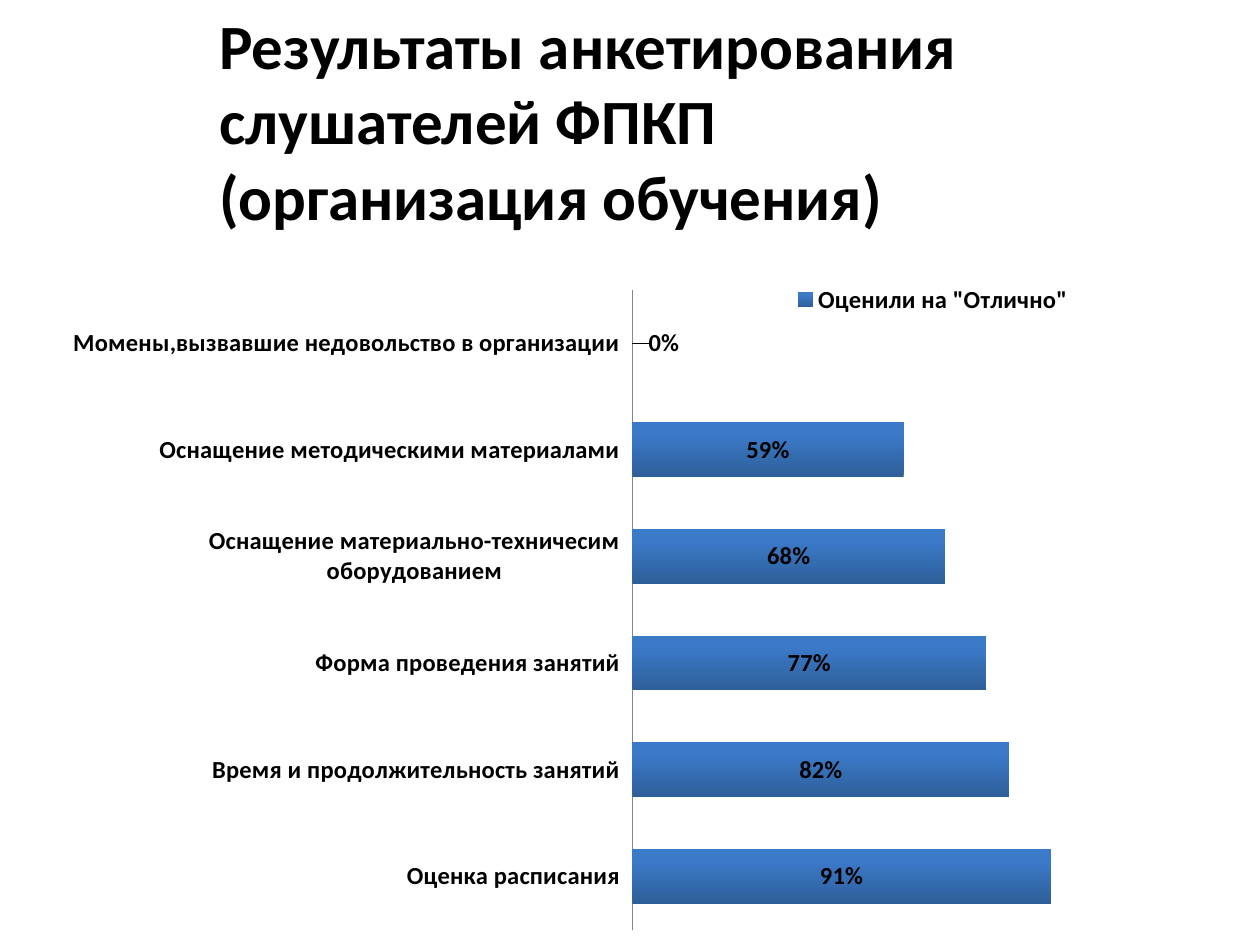
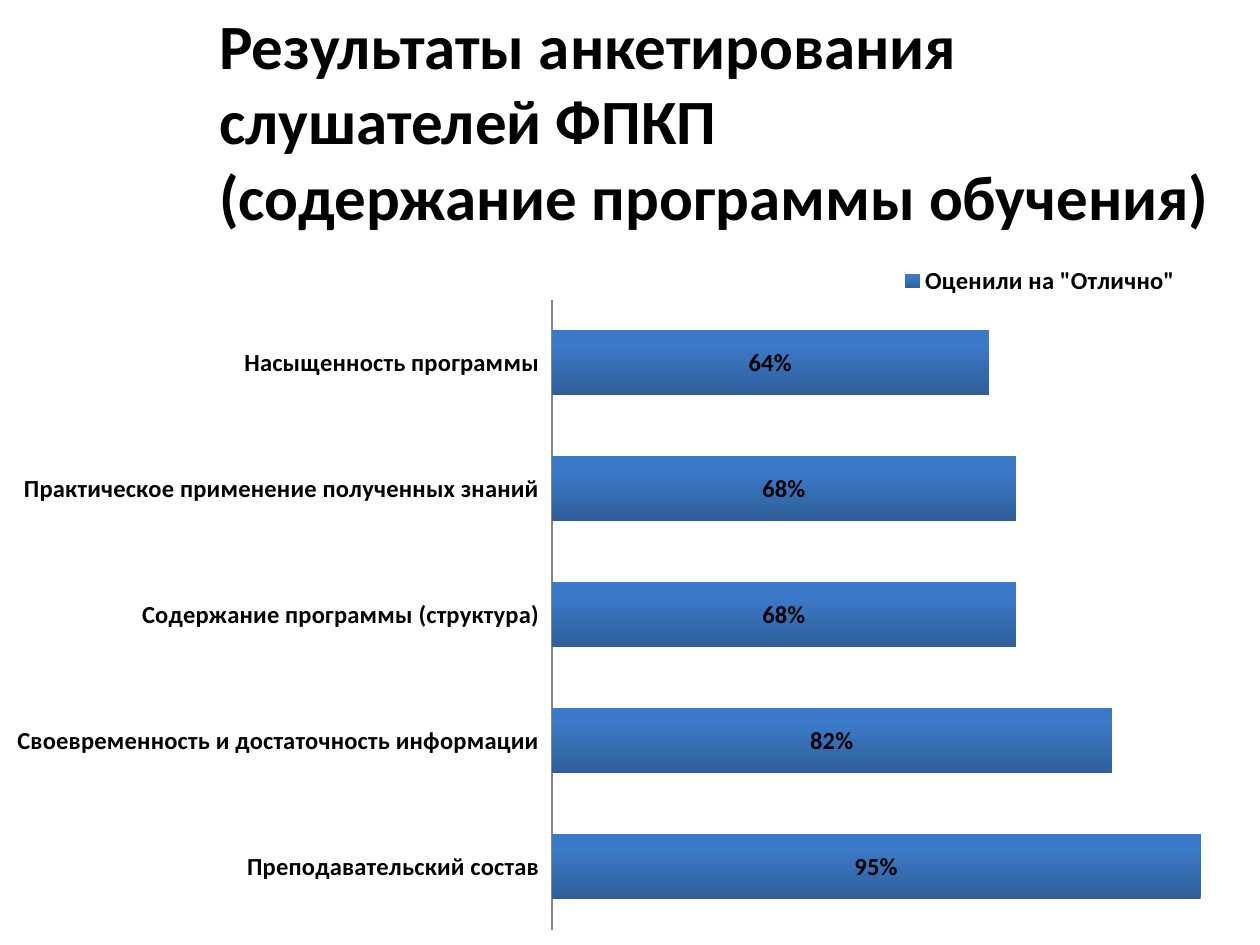
from lxml import etree
from pptx import Presentation
from pptx.chart.data import CategoryChartData
from pptx.dml.color import RGBColor
from pptx.enum.chart import XL_CHART_TYPE, XL_LEGEND_POSITION, XL_TICK_LABEL_POSITION, XL_TICK_MARK
from pptx.oxml.ns import qn
from pptx.util import Inches, Pt

BAR_STACKED = XL_CHART_TYPE.BAR_STACKED
LEGEND_TOP = XL_LEGEND_POSITION.TOP
LABELS_LOW = XL_TICK_LABEL_POSITION.LOW
NO_TICK = XL_TICK_MARK.NONE

FONT = "Calibri"
BLACK = "000000"
AXIS_GREY = "868686"
BAR_DARK, BAR_LIGHT = "2E5F99", "3B7AC9"
TITLE_BOX = (1.64, 0, 8.36, 1.92)
TITLE_START = "Результаты анкетирования слушателей ФПКП"
SERIES_NAME = 'Оценили на "Отлично"'

SURVEYS = [
    {
        "topic": "(организация обучения)",
        "box": (0.47, 1.8, 8.36, 5.7),
        "plot": (5.02, 2.3, 3.65, 5.08),
        "legend": (6.27, 2.22),
        "scores": [
            ("Оценка расписания", 0.91),
            ("Время и продолжительность занятий", 0.82),
            ("Форма проведения занятий", 0.77),
            ("Оснащение материально-техничесим оборудованием", 0.68),
            ("Оснащение методическими материалами", 0.59),
            ("Момены,вызвавшие недовольство в организации", 0),
        ],
    },
    {
        "topic": "(содержание программы обучения)",
        "box": (0, 1.87, 10, 5.63),
        "plot": (4.38, 2.38, 5.42, 5),
        "legend": (7.12, 2.07),
        "scores": [
            ("Преподавательский состав", 0.95),
            ("Своевременность и достаточность информации", 0.82),
            ("Содержание программы (структура)", 0.68),
            ("Практическое применение полученных знаний", 0.68),
            ("Насыщенность программы", 0.64),
        ],
    },
]


def color(value):
    """Turn a hex string into a colour."""
    return RGBColor.from_string(value)


def style_font(font, size):
    """Apply the shared bold black type."""
    font.name, font.size, font.bold = FONT, Pt(size), True
    font.color.rgb = color(BLACK)


def set_layout(parent, index, **settings):
    """Give a chart part a manual layout."""
    for old in parent.findall(qn("c:layout")):
        parent.remove(old)
    layout = etree.Element(qn("c:layout"))
    manual = etree.SubElement(layout, qn("c:manualLayout"))
    for tag, value in settings.items():
        etree.SubElement(manual, qn("c:" + tag), val=str(value))
    parent.insert(index, layout)


def add_title(slide, box, topic):
    """Write the two-part survey heading."""
    tf = slide.shapes.add_textbox(*map(Inches, box)).text_frame
    tf.word_wrap = True
    p = tf.paragraphs[0]
    for i, text in enumerate((TITLE_START, topic)):
        if i:
            p.add_line_break()
        r = p.add_run()
        r.text = text
        style_font(r.font, 36)


def style_axes(chart):
    """Show only the category axis and fix the scale to 100 %."""
    values, categories = chart.value_axis, chart.category_axis
    values.minimum_scale, values.maximum_scale = 0, 1
    values.has_major_gridlines = False
    values.visible = False
    categories.major_tick_mark = categories.minor_tick_mark = NO_TICK
    categories.tick_label_position = LABELS_LOW
    categories.format.line.color.rgb = color(AXIS_GREY)
    style_font(categories.tick_labels.font, 14)


def style_bars(plot, scores):
    """Fill the bars and label them, moving zero labels off the axis."""
    plot.gap_width, plot.overlap = 95, 100
    series = plot.series[0]
    fill = series.format.fill
    fill.gradient()
    fill.gradient_angle = 90
    for stop, position, shade in zip(fill.gradient_stops, (0, 0.8), (BAR_DARK, BAR_LIGHT)):
        stop.position = position
        stop.color.rgb = color(shade)
    labels = series.data_labels
    labels.show_value = True
    labels.number_format, labels.number_format_is_linked = "0%", False
    style_font(labels.font, 14)
    for i, (_, score) in enumerate(scores):
        if score == 0:
            style_font(series.points[i].data_label.font, 14)
    for label in series._element.iter(qn("c:dLbl")):
        set_layout(label, 1, x=0.03, y=0)


def add_scores_chart(slide, box, plot, legend, scores):
    """Draw the bar chart with its plot and legend placed inside the box."""
    left, top, width, height = box
    data = CategoryChartData(number_format="0%")
    data.categories = [name for name, _ in scores]
    data.add_series(SERIES_NAME, [score for _, score in scores])
    chart = slide.shapes.add_chart(BAR_STACKED, *map(Inches, box), data).chart
    chart.has_title = False
    style_font(chart.font, 10)
    style_axes(chart)
    style_bars(chart.plots[0], scores)
    chart.has_legend = True
    chart.legend.position = LEGEND_TOP
    chart.legend.include_in_layout = False
    style_font(chart.legend.font, 14)

    def share(x, y):
        """Express a point as fractions of the box."""
        return {"x": (x - left) / width, "y": (y - top) / height}

    area = chart._chartSpace.find(".//" + qn("c:plotArea"))
    set_layout(area, 0, layoutTarget="inner", xMode="edge", yMode="edge",
               **share(*plot[:2]), w=plot[2] / width, h=plot[3] / height)
    set_layout(chart.legend._element, 1, xMode="edge", yMode="edge", **share(*legend))


def add_survey_slide(prs, topic, box, plot, legend, scores):
    """Add one survey result slide."""
    slide = prs.slides.add_slide(prs.slide_layouts[6])
    add_scores_chart(slide, box, plot, legend, scores)
    add_title(slide, TITLE_BOX, topic)


def main():
    """Build and save the presentation."""
    prs = Presentation()
    prs.slide_width, prs.slide_height = Inches(10), Inches(7.5)
    for survey in SURVEYS:
        add_survey_slide(prs, **survey)
    prs.save("out.pptx")


if __name__ == "__main__":
    main()
